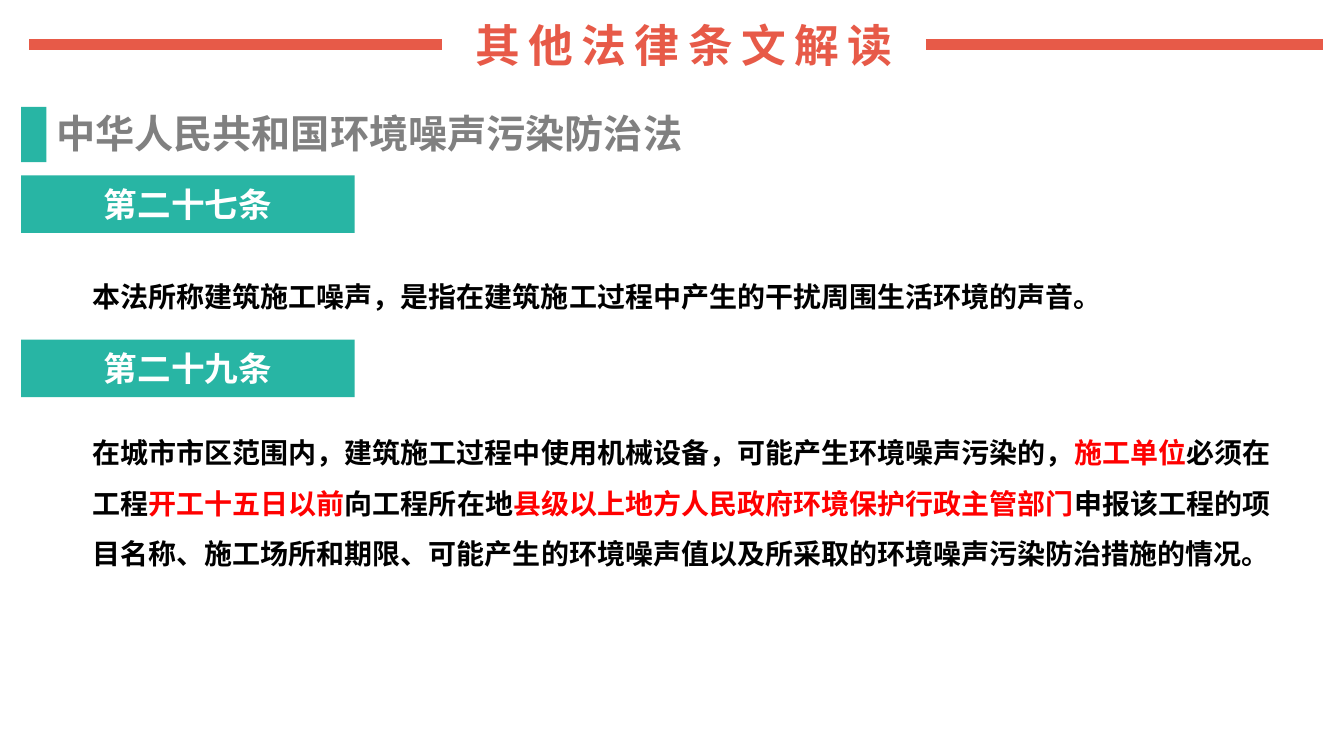
from dataclasses import dataclass
from lxml.etree import SubElement
from pptx import Presentation
from pptx.dml.color import RGBColor
from pptx.enum.shapes import MSO_CONNECTOR, MSO_SHAPE
from pptx.enum.text import MSO_ANCHOR, MSO_AUTO_SIZE, PP_ALIGN
from pptx.oxml.ns import qn
from pptx.util import Inches, Pt

TITLE = "其他法律条文解读"
LAW = "中华人民共和国环境噪声污染防治法"
# Runs are (text, is key phrase)
ARTICLES = [
    {"name": "第二十七条", "top": 1.74, "box": (0.82, 2.56, 10.3, 0.55),
     "runs": [("本法所称建筑施工噪声，是指在建筑施工过程中产生的干扰周围生活环境的声音。", False)]},
    {"name": "第二十九条", "top": 3.37, "box": (0.82, 4.11, 11.99, 1.56),
     "runs": [
         ("在城市市区范围内，建筑施工过程中使用机械设备，可能产生环境噪声污染的，", False),
         ("施工单位", True),
         ("必须在工程", False),
         ("开工十五日以前", True),
         ("向工程所在地", False),
         ("县级以上地方人民政府环境保护行政主管部门", True),
         ("申报该工程的项目名称、施工场所和期限、可能产生的环境噪声值"
          "以及所采取的环境噪声污染防治措施的情况。", False)]},
]
RULES = [(0.29, 4.39), (9.19, 13.13)]
RULE_Y = 0.44
LEFT = 0.21


@dataclass(frozen=True)
class Theme:
    font: str = "Noto Sans CJK SC"
    coral: str = "E75A48"
    teal: str = "28B5A4"
    gray: str = "808080"
    black: str = "000000"
    red: str = "FF0000"
    white: str = "FFFFFF"
    title: int = 32
    law: int = 28
    name: int = 24
    body: int = 20
    rule: float = 8.25


THEME = Theme()


def style(run, size, color):
    font = run.font
    font.name, font.size, font.bold = THEME.font, Pt(size), True
    font.color.rgb = RGBColor.from_string(color)
    SubElement(font._element, qn("a:ea")).set("typeface", THEME.font)


def add_text(slide, box, runs, size, anchor=MSO_ANCHOR.TOP, spacing=None):
    """Add a text box holding one paragraph of (text, color) runs."""
    frame = slide.shapes.add_textbox(*map(Inches, box)).text_frame
    frame.word_wrap = True
    frame.auto_size = MSO_AUTO_SIZE.SHAPE_TO_FIT_TEXT
    frame.vertical_anchor = anchor
    para = frame.paragraphs[0]
    para.line_spacing = spacing
    for text, color in runs:
        run = para.add_run()
        run.text = text
        style(run, size, color)
    return para


def add_block(slide, box):
    block = slide.shapes.add_shape(MSO_SHAPE.RECTANGLE, *map(Inches, box))
    block.shadow.inherit = False
    block.fill.solid()
    block.fill.fore_color.rgb = RGBColor.from_string(THEME.teal)
    block.line.fill.background()
    return block


def add_rule(slide, start, end):
    rule = slide.shapes.add_connector(
        MSO_CONNECTOR.STRAIGHT, *map(Inches, (start, RULE_Y, end, RULE_Y)))
    rule.line.width = Pt(THEME.rule)
    rule.line.color.rgb = RGBColor.from_string(THEME.coral)
    SubElement(rule._element.spPr, qn("a:effectLst"))


def add_article(slide, name, top, box, runs):
    frame = add_block(slide, (LEFT, top, 3.31, 0.57)).text_frame
    frame.text = name
    frame.vertical_anchor = MSO_ANCHOR.MIDDLE
    para = frame.paragraphs[0]
    para.alignment = PP_ALIGN.CENTER
    style(para.runs[0], THEME.name, THEME.white)
    tinted = [(text, THEME.red if key else THEME.black) for text, key in runs]
    add_text(slide, box, tinted, THEME.body, spacing=1.5)


def main():
    deck = Presentation()
    deck.slide_width, deck.slide_height = Inches(13.34), Inches(7.5)
    slide = deck.slides.add_slide(deck.slide_layouts[6])

    title = add_text(slide, (4.62, 0.12, 5.23, 0.64), [(TITLE, THEME.coral)],
                     THEME.title, MSO_ANCHOR.MIDDLE)
    title.runs[0].font._element.set("spc", "600")
    for start, end in RULES:
        add_rule(slide, start, end)

    add_block(slide, (LEFT, 1.06, 0.25, 0.55))
    add_text(slide, (0.46, 1.04, 6.84, 0.57), [(LAW, THEME.gray)], THEME.law)
    for article in ARTICLES:
        add_article(slide, **article)
    deck.save("out.pptx")


if __name__ == "__main__":
    main()
